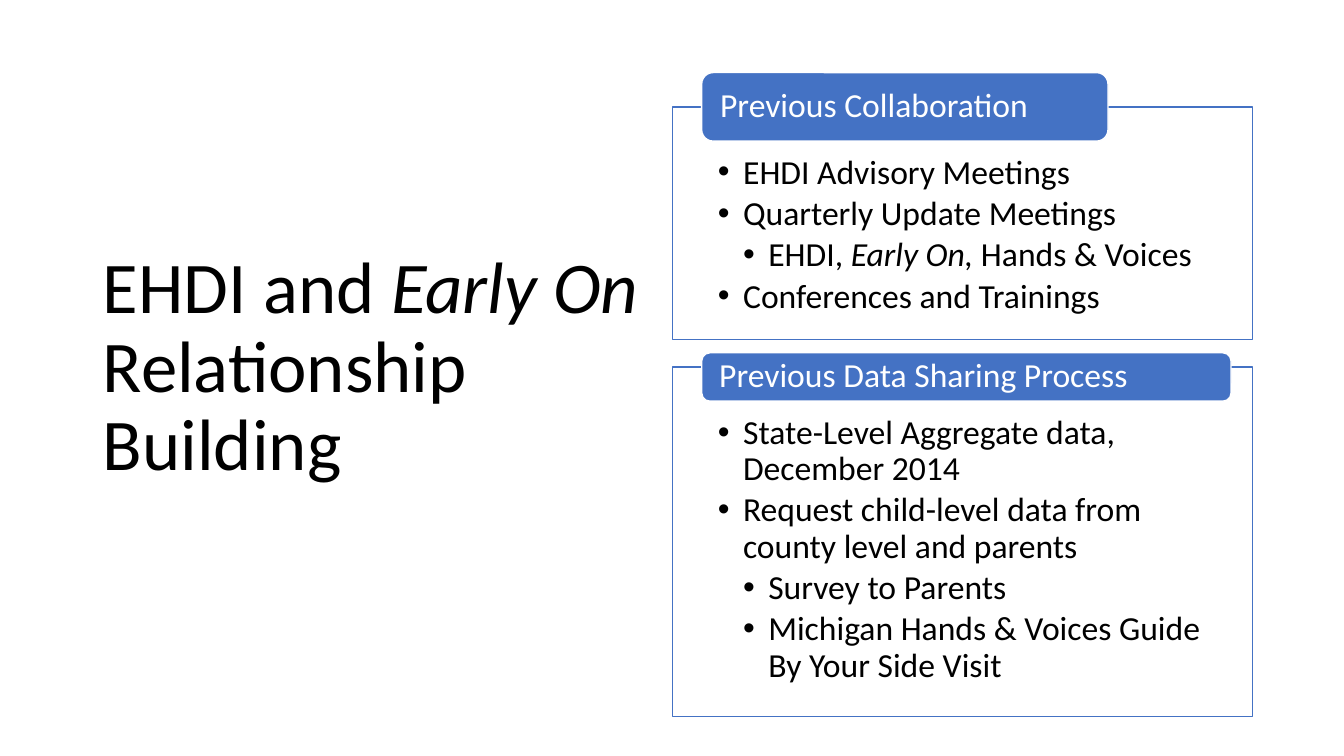
from lxml.etree import SubElement
from pptx import Presentation
from pptx.dml.color import RGBColor
from pptx.enum.shapes import MSO_SHAPE
from pptx.enum.text import MSO_ANCHOR, MSO_AUTO_SIZE, PP_ALIGN
from pptx.oxml.ns import qn
from pptx.util import Inches, Pt

BLUE = RGBColor(0x44, 0x72, 0xC4)
WHITE = RGBColor(0xFF, 0xFF, 0xFF)
BLACK = RGBColor(0x00, 0x00, 0x00)
FONT = "Calibri"
BULLET_STEP = 0.25

# Each card: top, height, heading, heading place, and (level, text) items.
# Text between asterisks is italic.
CARDS = [
    (1.06, 2.31, "Previous Collaboration", (6.96, 0.72, 4.03, 0.68), [
        (0, "EHDI Advisory Meetings"),
        (0, "Quarterly Update Meetings"),
        (1, "EHDI, *Early On, *Hands & Voices"),
        (0, "Conferences and Trainings"),
    ]),
    (3.64, 3.47, "Previous Data Sharing Process", (6.96, 3.5, 5.25, 0.48), [
        (0, "State-Level Aggregate data, December 2014"),
        (0, "Request child-level data from county level and parents"),
        (1, "Survey to Parents"),
        (1, "Michigan Hands & Voices Guide By Your Side Visit"),
    ]),
]


def place(shape, left, top, width, height):
    shape.left, shape.top = Inches(left), Inches(top)
    shape.width, shape.height = Inches(width), Inches(height)


def set_frame(shape, margins, anchor):
    frame = shape.text_frame
    frame.word_wrap = True
    frame.auto_size = MSO_AUTO_SIZE.NONE
    frame.vertical_anchor = anchor
    (frame.margin_left, frame.margin_top,
     frame.margin_right, frame.margin_bottom) = map(Inches, margins)
    return frame


def set_outline(shape, fill, line):
    shape.fill.solid()
    shape.fill.fore_color.rgb = fill
    shape.line.color.rgb = line
    shape.line.width = Pt(1)


def write_text(paragraph, text, size=24, color=BLACK, space_after=0):
    paragraph.alignment = PP_ALIGN.LEFT
    paragraph.line_spacing = 0.9
    paragraph.space_before = Pt(0)
    paragraph.space_after = Pt(space_after)
    for index, part in enumerate(text.split("*")):
        run = paragraph.add_run()
        run.text = part
        run.font.name = FONT
        run.font.size = Pt(size)
        run.font.color.rgb = color
        run.font.italic = index % 2 == 1


def add_bullet(paragraph, level):
    paragraph.level = level
    properties = paragraph._p.get_or_add_pPr()
    properties.set("marL", str(Inches(BULLET_STEP * (level + 1))))
    properties.set("indent", str(-Inches(BULLET_STEP)))
    SubElement(properties, qn("a:buFont")).set("typeface", "Arial")
    SubElement(properties, qn("a:buChar")).set("char", "•")


def fill_title(title):
    place(title, 0.92, 0.61, 5.53, 6.09)
    frame = set_frame(title, (0.1, 0.05, 0.1, 0.05), MSO_ANCHOR.MIDDLE)
    write_text(frame.paragraphs[0], "EHDI and *Early On *Relationship Building", size=52)


def fill_list(body, top, height, items):
    place(body, 6.67, top, 5.75, height)
    set_outline(body, WHITE, BLUE)
    frame = set_frame(body, (0.45, 0.48, 0.45, 0.19), MSO_ANCHOR.TOP)
    for index, (level, text) in enumerate(items):
        paragraph = frame.add_paragraph() if index else frame.paragraphs[0]
        add_bullet(paragraph, level)
        write_text(paragraph, text, space_after=3.6)


def add_heading(slide, text, position):
    heading = slide.shapes.add_shape(MSO_SHAPE.ROUNDED_RECTANGLE, *map(Inches, position))
    heading.shadow.inherit = False
    set_outline(heading, BLUE, WHITE)
    frame = set_frame(heading, (0.15, 0, 0.15, 0), MSO_ANCHOR.MIDDLE)
    write_text(frame.paragraphs[0], text, color=WHITE)


def main():
    presentation = Presentation()
    presentation.slide_width = Inches(13.33)
    presentation.slide_height = Inches(7.5)
    # Layout with a title and two content areas
    slide = presentation.slides.add_slide(presentation.slide_layouts[3])
    fill_title(slide.shapes.title)

    # Cards with a list and an overlapping heading
    for number, (top, height, heading, position, items) in enumerate(CARDS, start=1):
        fill_list(slide.placeholders[number], top, height, items)
        add_heading(slide, heading, position)

    presentation.save("out.pptx")


if __name__ == "__main__":
    main()
